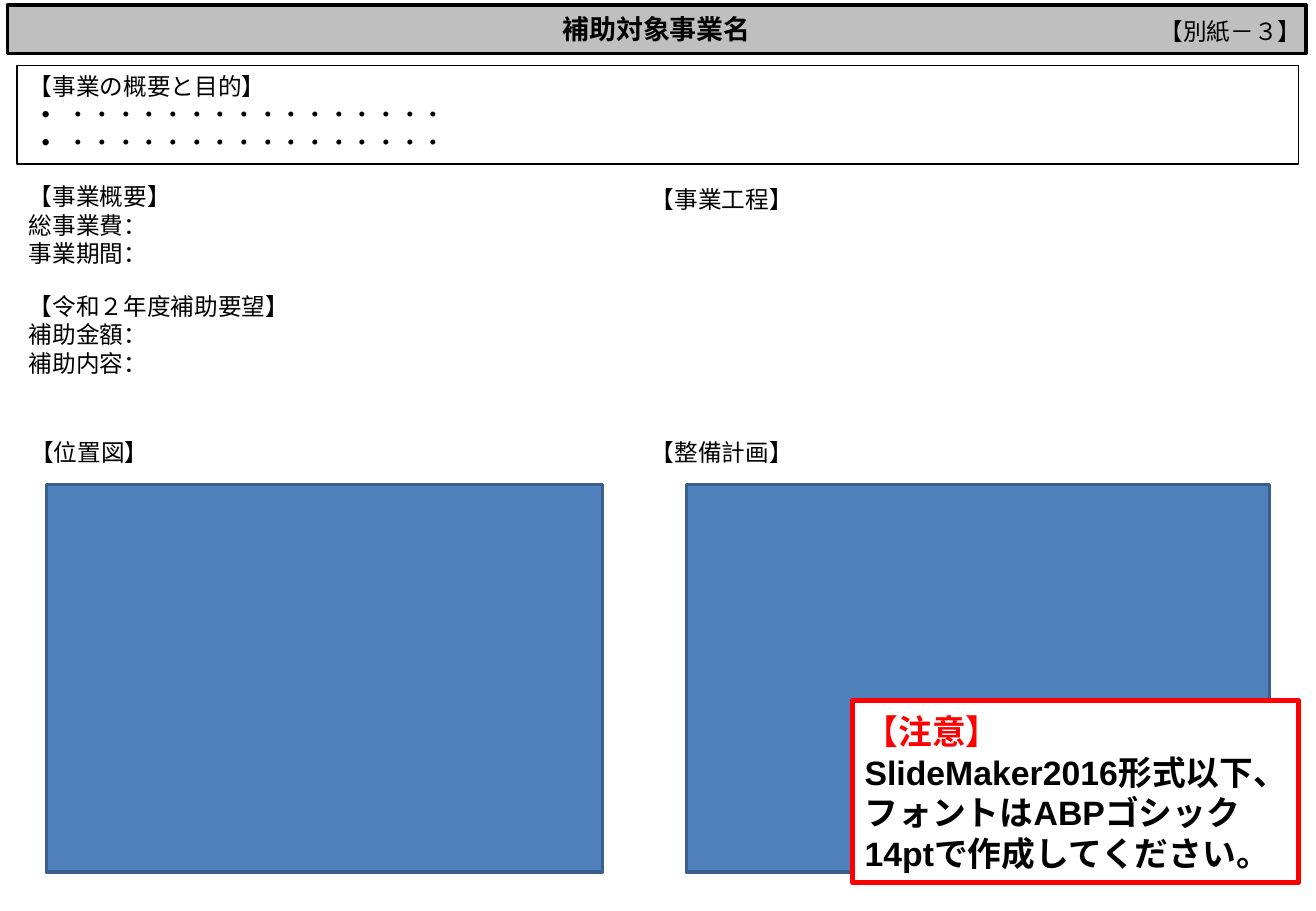
"""Build the one-page summary form for a subsidised project."""
from dataclasses import dataclass, field

from lxml.etree import SubElement
from pptx import Presentation
from pptx.dml.color import RGBColor
from pptx.enum.shapes import MSO_SHAPE as Preset
from pptx.enum.text import MSO_ANCHOR as Anchor, PP_ALIGN as Align
from pptx.oxml.ns import qn
from pptx.shapes.autoshape import Shape
from pptx.util import Pt

BODY = {"name": "Calibri", "size": Pt(14), "bold": False}
HEADING = {"name": "Arial", "size": Pt(16), "bold": True}
NOTICE = {"name": "Arial", "size": Pt(20), "bold": True}
DOTS = "・" * 16
LEFT_X, RIGHT_X = 10.8, 378.7
MAP_LABEL_Y, MAP_Y, MAP_HEIGHT = 256.3, 287.3, 229.7


@dataclass
class Line:
    text: str
    color: str = "000000"
    bullet: bool = False
    gap: float = 0


@dataclass
class Block:
    left: float
    top: float
    width: float
    height: float
    lines: list[Line] = field(default_factory=list)
    font: dict = field(default_factory=lambda: BODY)
    align: Align = Align.LEFT
    anchor: Anchor = Anchor.TOP
    fill: str = ""
    border: str = ""
    weight: float = 0


def rgb(value: str) -> RGBColor:
    return RGBColor.from_string(value)


def write_lines(shape: Shape, block: Block) -> None:
    frame = shape.text_frame
    frame.word_wrap = True
    frame.vertical_anchor = block.anchor
    for index, line in enumerate(block.lines):
        paragraph = frame.add_paragraph() if index else frame.paragraphs[0]
        paragraph.alignment = block.align
        paragraph.space_before = Pt(line.gap)
        if line.bullet:
            properties = paragraph._p.get_or_add_pPr()
            properties.set("marL", str(Pt(22.5)))
            properties.set("indent", str(Pt(-15)))
            SubElement(properties, qn("a:buFont"), typeface="Arial")
            SubElement(properties, qn("a:buChar"), char="•")
        run = paragraph.add_run()
        run.text = line.text
        for key, value in block.font.items():
            setattr(run.font, key, value)
        run.font.color.rgb = rgb(line.color)


def format_block(shape: Shape, block: Block) -> None:
    for key in ("left", "top", "width", "height"):
        setattr(shape, key, Pt(getattr(block, key)))
    if block.fill:
        shape.fill.solid()
        shape.fill.fore_color.rgb = rgb(block.fill)
    else:
        shape.fill.background()
    if block.border:
        shape.line.color.rgb = rgb(block.border)
        shape.line.width = Pt(block.weight)
    write_lines(shape, block)


def label(left: float, top: float, text: str) -> Block:
    return Block(left, top, 283, 24.5, [Line(text)])


def map_area(left: float, width: float) -> Block:
    return Block(left, MAP_Y, width, MAP_HEIGHT,
                 fill="4F81BD", border="3A5F8C", weight=2)


PROJECT_NAME = Block(4.3, 2.9, 769.7, 28.8, [Line("補助対象事業名")], HEADING,
                     Align.CENTER, Anchor.MIDDLE, "BFBFBF", "000000", 2)
BLOCKS = [
    map_area(27.4, 329.8),
    Block(10.1, 104.4, 347, 123.8, [
        Line("【事業概要】"),
        Line("総事業費："),
        Line("事業期間："),
        Line("【令和２年度補助要望】", gap=14.6),
        Line("補助金額："),
        Line("補助内容："),
    ]),
    Block(10.1, 38.9, 759.6, 58.3, [
        Line("【事業の概要と目的】"),
        Line(DOTS, bullet=True),
        Line(DOTS, bullet=True),
    ], border="000000", weight=0.75),
    label(LEFT_X, MAP_LABEL_Y, "【位置図】"),
    label(RIGHT_X, 105.8, "【事業工程】"),
    label(RIGHT_X, MAP_LABEL_Y, "【整備計画】"),
    map_area(406.8, 345.6),
    Block(678.2, 6.5, 102.2, 25.2, [Line("【別紙－３】")], align=Align.CENTER),
    Block(505.4, 415.4, 264.2, 108, [
        Line("【注意】", "FF0000"),
        Line("SlideMaker2016形式以下、"),
        Line("フォントはABPゴシック14ptで作成してください。"),
    ], NOTICE, anchor=Anchor.MIDDLE, fill="FFFFFF", border="FF0000", weight=3),
]


def main() -> None:
    deck = Presentation()
    deck.slide_width, deck.slide_height = Pt(780), Pt(540)
    slide = deck.slides.add_slide(deck.slide_layouts[5])
    format_block(slide.shapes.title, PROJECT_NAME)
    for block in BLOCKS:
        box = [Pt(v) for v in (block.left, block.top, block.width, block.height)]
        if block.border:
            shape = slide.shapes.add_shape(Preset.RECTANGLE, *box)
            shape.shadow.inherit = False
        else:
            shape = slide.shapes.add_textbox(*box)
        format_block(shape, block)
    deck.save("out.pptx")


if __name__ == "__main__":
    main()
